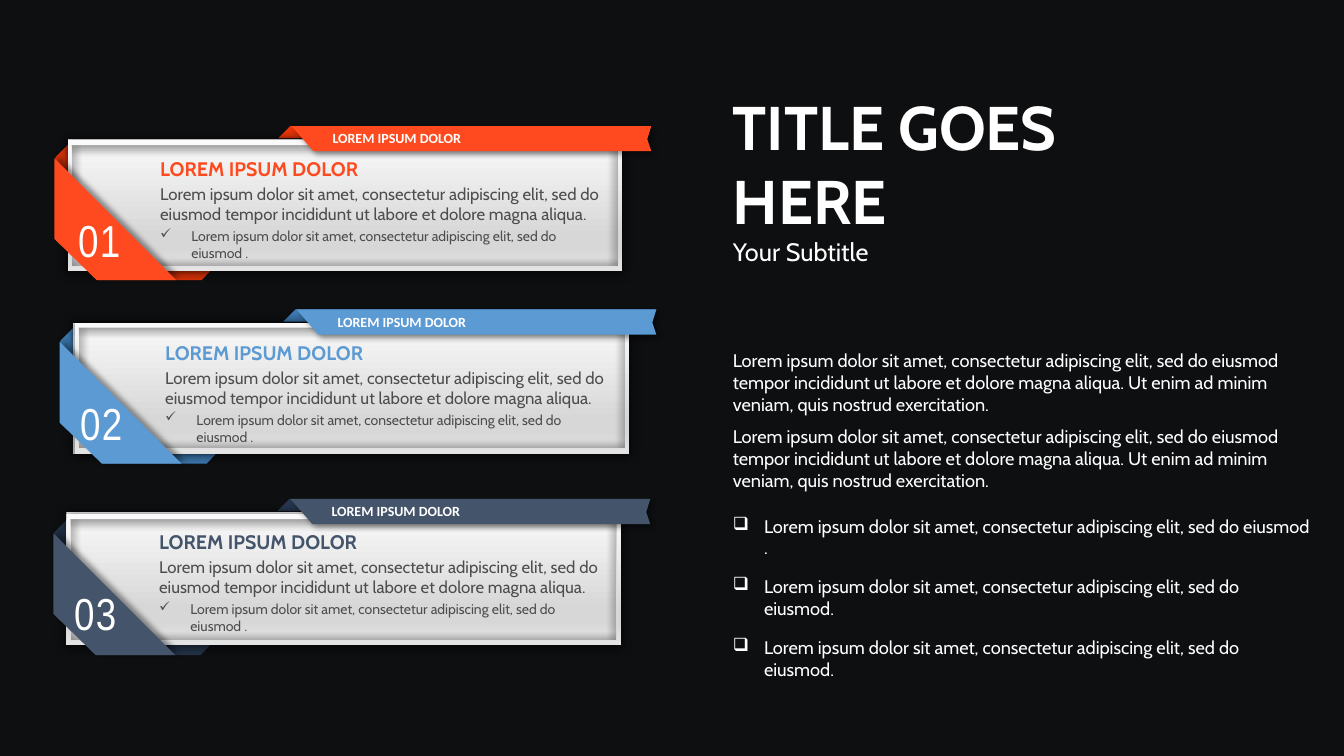
from dataclasses import dataclass
from typing import NamedTuple

from lxml.etree import SubElement as Sub
from pptx import Presentation
from pptx.dml.color import RGBColor as Rgb
from pptx.enum.shapes import MSO_SHAPE as Kind
from pptx.enum.text import MSO_AUTO_SIZE as Auto, PP_ALIGN as Align
from pptx.oxml.ns import qn
from pptx.shapes.autoshape import Shape
from pptx.slide import Slide
from pptx.util import Inches, Pt

Dots = list[tuple[float, float]]


@dataclass(frozen=True)
class Theme:
    """Hold the colours, fonts and type sizes of the slide."""
    back: str = "0E0F11"
    white: str = "FFFFFF"
    gray: str = "4D4D4D"
    steel: tuple = ((0, "FAFAFA"), (74, "D7D7D7"), (83, "D7D7D7"), (100, "E4E4E4"))
    font: str = "Cabin"
    thin: str = "Arial Narrow"
    tag: str = "Calibri"
    title: int = 44
    count: int = 32
    sub: int = 18
    head: int = 14
    body: int = 13
    text: int = 12
    small: int = 10


class Card(NamedTuple):
    """Describe one numbered card."""
    num: str
    left: float
    top: float
    color: str
    dark: str
    rim: tuple[float, float]
    shift: float
    drop: float


class Line(NamedTuple):
    """Describe one paragraph of text."""
    text: str
    size: int
    color: str
    bold: bool = False
    font: str = "Cabin"
    gap: float = 0
    mark: str = ""
    mid: bool = False
    track: int = 0


class Shade(NamedTuple):
    """Describe an outer shadow."""
    alpha: int
    blur: float
    dist: float
    angle: int


T = Theme()
HEAD = "LOREM IPSUM DOLOR"
LOREM = "Lorem ipsum dolor sit amet, consectetur adipiscing elit, sed do eiusmod"
LONG = LOREM + " tempor incididunt ut labore et dolore magna aliqua."
FULL = LONG + " Ut enim ad minim veniam, quis nostrud exercitation."
CARDS = [
    Card("01", 0.55, 1.25, "FE4A1E", "EA360A", (0.12, 0.14), 0.13, 0),
    Card("02", 0.6, 3.07, "5C9AD3", "3E7CB5", (0.14, 0.13), 0.1, 0),
    Card("03", 0.54, 4.95, "44546B", "26364D", (0.12, 0.15), 0.1, 0.02),
]
FOOT: Dots = [(0.28, 1.37), (1.6, 1.37), (1.45, 1.53), (0.42, 1.53), (0.27, 1.39)]
SIDE: Dots = [(0.17, 0.14), (0.17, 1.1), (0.07, 1.2), (0, 1.13), (0, 0.31)]
FOLD: Dots = [(2.33, 0), (5.9, 0), (5.86, 0.12), (2.21, 0.12)]
BAND: Dots = [(0, 0.32), (1.21, 1.53), (0.42, 1.53), (0, 1.12)]
TAB: Dots = [(2.34, 0), (5.91, 0), (5.87, 0.13), (5.91, 0.25), (2.56, 0.25)]
HOLE: Dots = [(0.04, 0.05), (0.04, 1.25), (5.46, 1.25), (5.46, 0.05)]
EDGE: Dots = [(0, 0), (5.5, 0), (5.5, 1.3), (0, 1.3)]


def paint(shape: Shape, color: str = "", shade: Shade | None = None) -> None:
    """Fill a shape with a colour or the steel blend, and shade it."""
    fill = shape.fill
    if color:
        fill.solid()
        fill.fore_color.rgb = Rgb.from_string(color)
    else:
        fill.gradient()
        fill.gradient_angle = 270
        stops = next(shape._element.spPr.iter(qn("a:gsLst")))
        for stop in list(stops):
            stops.remove(stop)
        for pos, tone in T.steel:
            stop = Sub(stops, qn("a:gs"), pos=str(pos * 1000))
            Sub(stop, qn("a:srgbClr"), val=tone)
    shape.line.fill.background()
    shape.shadow.inherit = False
    if shade:
        cast = Sub(shape._element.spPr.find(qn("a:effectLst")), qn("a:outerShdw"),
                   blurRad=str(Pt(shade.blur)), dist=str(Pt(shade.dist)),
                   dir=str(shade.angle * 60000), algn="ctr", rotWithShape="0")
        tone = Sub(cast, qn("a:srgbClr"), val="000000")
        Sub(tone, qn("a:alpha"), val=str(shade.alpha * 1000))


def draw(slide: Slide, left: float, top: float, *rings: Dots) -> Shape:
    """Build an outline from one or more closed rings."""
    first, *rest = [[(Inches(left + x), Inches(top + y)) for x, y in ring] for ring in rings]
    pen = slide.shapes.build_freeform(*first[0])
    pen.add_line_segments(first[1:])
    for ring in rest:
        pen.move_to(*ring[0])
        pen.add_line_segments(ring[1:])
    return pen.convert_to_shape()


def write(slide: Slide, left: float, top: float, wide: float, high: float,
          lines: list[Line], slim: bool = False) -> None:
    """Add a text box that holds the given lines."""
    frame = slide.shapes.add_textbox(*map(Inches, (left, top, wide, high))).text_frame
    frame.word_wrap = True
    frame.auto_size = Auto.SHAPE_TO_FIT_TEXT
    if slim:
        frame.margin_left = frame.margin_right = Inches(0.07)
        frame.margin_top = frame.margin_bottom = Inches(0.03)
    for at, line in enumerate(lines):
        para = frame.add_paragraph() if at else frame.paragraphs[0]
        if line.gap:
            para.space_before = Pt(line.gap)
        if line.mid:
            para.alignment = Align.CENTER
        if line.mark:
            props = para._p.get_or_add_pPr()
            props.set("marL", str(Inches(0.31)))
            props.set("indent", str(Inches(-0.31)))
            Sub(props, qn("a:buChar"), char=line.mark)
        run = para.add_run()
        run.text = line.text
        font = run.font
        font.name, font.size, font.bold = line.font, Pt(line.size), line.bold
        font.color.rgb = Rgb.from_string(line.color)
        if line.track:
            run._r.get_or_add_rPr().set("spc", str(line.track))


def build(slide: Slide, card: Card) -> None:
    """Draw one card with its ribbons and text."""
    x, y = card.left, card.top
    low = y + card.drop
    for top, ring in ((low, FOOT), (low, SIDE), (y, FOLD)):
        paint(draw(slide, x, top, ring), card.dark)
    box = map(Inches, (x + 0.12, y + 0.13, 5.5, 1.3))
    paint(slide.shapes.add_shape(Kind.RECTANGLE, *box), shade=Shade(40, 3, 0, 0))
    rim = draw(slide, x + card.rim[0], y + card.rim[1], HOLE, EDGE)
    paint(rim, shade=Shade(100, 8.5, 1, 90))
    write(slide, x + 0.94, y + 0.26, 4.61, 1.14, [
        Line(HEAD, T.head, card.color, True),
        Line(LONG, T.text, T.gray, gap=2.4),
        Line(LOREM + " .", T.small, T.gray, gap=2.4, mark="✓")])
    paint(draw(slide, x - 0.01, low, BAND), card.color, Shade(40, 4, 3, 315))
    write(slide, x + card.shift, y + 0.83, 0.61, 0.61,
          [Line(card.num, T.count, T.white, font=T.thin, mid=True, track=100)], True)
    paint(draw(slide, x, y, TAB), card.color, Shade(40, 4, 3, 45))
    write(slide, x + 2.43, y + 0.01, 1.91, 0.24,
          [Line(HEAD, T.small, T.white, True, T.tag, mid=True)], True)


def main() -> None:
    """Build the slide and save it."""
    deck = Presentation()
    deck.slide_width, deck.slide_height = Inches(13.33), Inches(7.5)
    slide = deck.slides.add_slide(deck.slide_layouts[6])
    slide.background.fill.solid()
    slide.background.fill.fore_color.rgb = Rgb.from_string(T.back)
    for card in CARDS:
        build(slide, card)
    write(slide, 7.17, 0.83, 3.43, 1.88, [
        Line("TITLE GOES HERE", T.title, T.white, True),
        Line("Your Subtitle", T.sub, T.white)])
    items = [(FULL, 0, ""), (FULL, 7.3, ""), (LOREM + " .", 17, "❑")]
    items += [(LOREM + ".", 12.2, "❑")] * 2
    write(slide, 7.17, 3.42, 5.92, 3.4, [
        Line(text, T.body, T.white, gap=gap, mark=mark) for text, gap, mark in items])
    deck.save("out.pptx")


if __name__ == "__main__":
    main()
